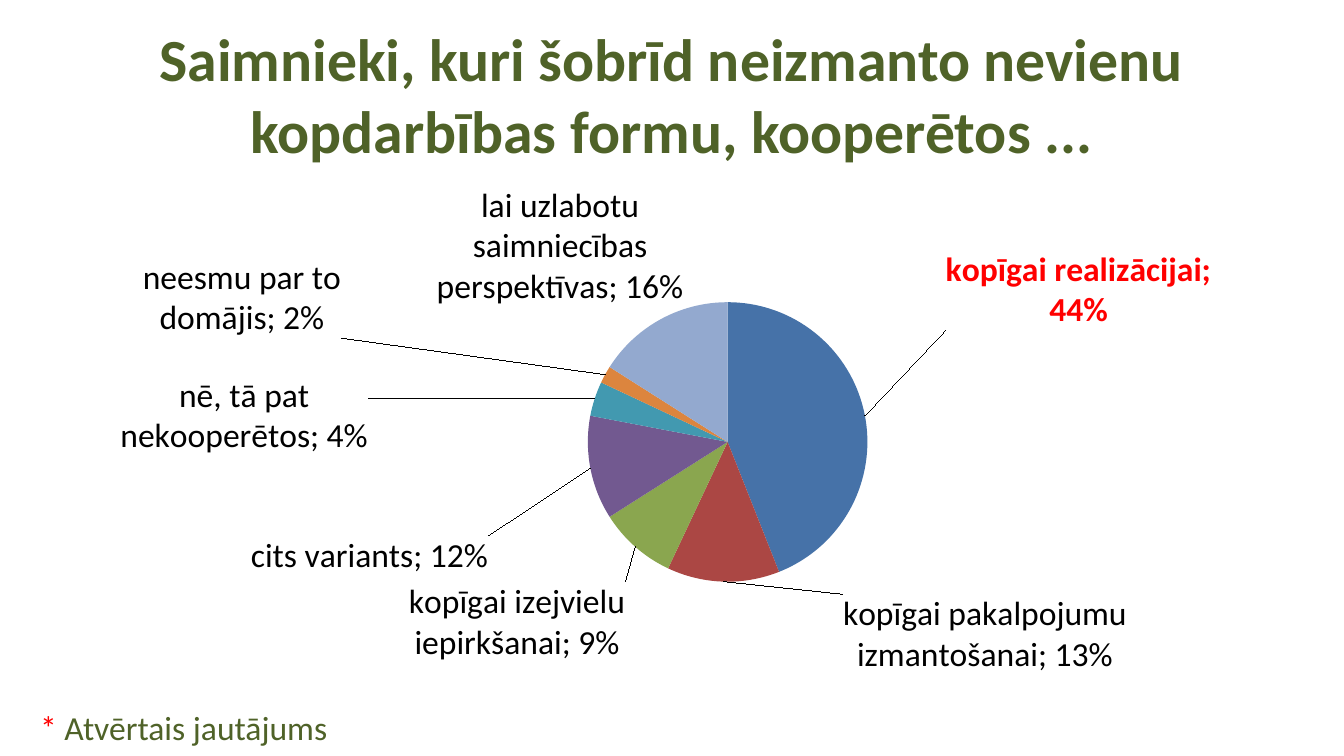
from dataclasses import dataclass

import lxml.etree
import pptx
import pptx.chart.data
import pptx.dml.color
import pptx.enum.chart
import pptx.enum.text
import pptx.oxml
import pptx.oxml.ns
import pptx.util

Cm = pptx.util.Cm
qn = pptx.oxml.ns.qn


@dataclass(frozen=True)
class Theme:
    font: str = "Calibri"
    title_size: int = 32
    body_size: int = 18
    green: str = "4F6228"
    red: str = "FF0000"
    black: str = "000000"


THEME = Theme()

# Category, percentage, slice colour, label shift from the slice edge (cm)
SLICES = [
    ("kopīgai realizācijai", 44, "4672A8", (1.38, -1.59)),
    ("kopīgai pakalpojumu izmantošanai", 13, "AB4744", (4.95, 0.09)),
    ("kopīgai izejvielu iepirkšanai", 9, "8AA64F", (-0.09, 0.55)),
    ("cits variants", 12, "725990", (-1.78, 1.25)),
    ("nē, tā pat nekooperētos", 4, "4299B0", (-4.14, 1.13)),
    ("neesmu par to domājis", 2, "DC853E", (-4.86, -0.62)),
    ("lai uzlabotu saimniecības perspektīvas", 16, "93A9CF", (0.51, -0.11)),
]


def rgb(color):
    return pptx.dml.color.RGBColor.from_string(color)


def format_font(font, size=THEME.body_size, color=THEME.black, bold=False):
    font.name = THEME.font
    font.size = pptx.util.Pt(size)
    font.bold = bold
    font.color.rgb = rgb(color)


def add_text(p, text, **fmt):
    r = p.add_run()
    r.text = text
    format_font(r.font, **fmt)


def manual_layout(**values):
    """Return a chart layout element holding the given settings in order."""
    layout = pptx.oxml.parse_xml(f"<c:layout {pptx.oxml.ns.nsdecls('c')}/>")
    manual = lxml.etree.SubElement(layout, qn("c:manualLayout"))
    for name, value in values.items():
        lxml.etree.SubElement(manual, qn(f"c:{name}")).set("val", str(value))
    return layout


def show_category_and_percent(labels):
    """Switch the label parts of a dLbl or dLbls element."""
    for name in ("LegendKey", "Val", "CatName", "SerName", "Percent", "BubbleSize"):
        tag = qn(f"c:show{name}")
        flag = labels.find(tag)
        if flag is None:
            flag = lxml.etree.SubElement(labels, tag)
        flag.set("val", "1" if name in ("CatName", "Percent") else "0")
    anchor = labels.find(qn("c:showBubbleSize"))
    separator = lxml.etree.Element(qn("c:separator"))
    separator.text = "; "
    anchor.addnext(separator)


def add_title(slide, box, text):
    sp = slide.shapes.title
    sp.left, sp.top, sp.width, sp.height = (Cm(v) for v in box)
    tf = sp.text_frame
    tf.word_wrap = True
    tf.vertical_anchor = pptx.enum.text.MSO_ANCHOR.MIDDLE
    p = tf.paragraphs[0]
    p.alignment = pptx.enum.text.PP_ALIGN.CENTER
    add_text(p, text, size=THEME.title_size, color=THEME.green, bold=True)


def add_pie(slide, box):
    data = pptx.chart.data.CategoryChartData(number_format="0")
    data.categories = [name for name, *_ in SLICES]
    data.add_series("Series 1", [value for _, value, *_ in SLICES])
    chart = slide.shapes.add_chart(
        pptx.enum.chart.XL_CHART_TYPE.PIE, *(Cm(v) for v in box), data).chart
    chart.has_title = False
    chart.has_legend = False
    format_font(chart.font)
    plot = chart.plots[0]
    plot.vary_by_categories = True

    # Position of the pie inside the chart
    area = chart._chartSpace.chart.plotArea
    for old in area.findall(qn("c:layout")):
        area.remove(old)
    area.insert(0, manual_layout(layoutTarget="inner", xMode="edge", yMode="edge",
                                 x=0.417, y=0.253, w=0.231, h=0.561))

    # Labels shared by all slices, with leader lines
    series = plot.series[0]
    labels = series.data_labels
    labels.number_format = "0%"
    labels.number_format_is_linked = False
    labels.position = pptx.enum.chart.XL_LABEL_POSITION.OUTSIDE_END
    format_font(labels.font)
    d_lbls = labels._element
    show_category_and_percent(d_lbls)
    for old in d_lbls.findall(qn("c:showLeaderLines")):
        d_lbls.remove(old)
    leader = lxml.etree.Element(qn("c:showLeaderLines"))
    leader.set("val", "1")
    d_lbls.find(qn("c:separator")).addnext(leader)

    # Slice colours and label places; the largest slice is stressed
    largest = max(value for _, value, *_ in SLICES)
    for i, (_, value, color, (dx, dy)) in enumerate(SLICES):
        point = series.points[i]
        point.format.fill.solid()
        point.format.fill.fore_color.rgb = rgb(color)
        point.format.line.fill.background()
        label = point.data_label
        stressed = value == largest
        format_font(label.font, color=THEME.red if stressed else THEME.black,
                    bold=stressed)
        label.position = pptx.enum.chart.XL_LABEL_POSITION.OUTSIDE_END
        d_lbl = d_lbls.findall(qn("c:dLbl"))[i]
        show_category_and_percent(d_lbl)
        d_lbl.find(qn("c:idx")).addnext(
            manual_layout(x=round(dx / box[2], 4), y=round(dy / box[3], 4)))
    for body in d_lbls.iter(qn("a:bodyPr")):
        body.set("wrap", "square")


def add_footnote(slide, box, text):
    tf = slide.shapes.add_textbox(*(Cm(v) for v in box)).text_frame
    tf.word_wrap = True
    p = tf.paragraphs[0]
    add_text(p, "*", color=THEME.red)
    add_text(p, text, color=THEME.green)


def main():
    prs = pptx.Presentation()
    prs.slide_width, prs.slide_height = Cm(25.4), Cm(14.29)
    slide = prs.slides.add_slide(prs.slide_layouts.get_by_name("Title Only"))
    add_title(slide, (1.27, 0.58, 22.86, 2.39),
              "Saimnieki, kuri šobrīd neizmanto nevienu "
              "kopdarbības formu, kooperētos ...")
    add_pie(slide, (-2.11, 3.33, 29.79, 9.42))
    add_footnote(slide, (0.51, 13.23, 19.81, 1.02), " Atvērtais jautājums")
    prs.save("out.pptx")


if __name__ == "__main__":
    main()
